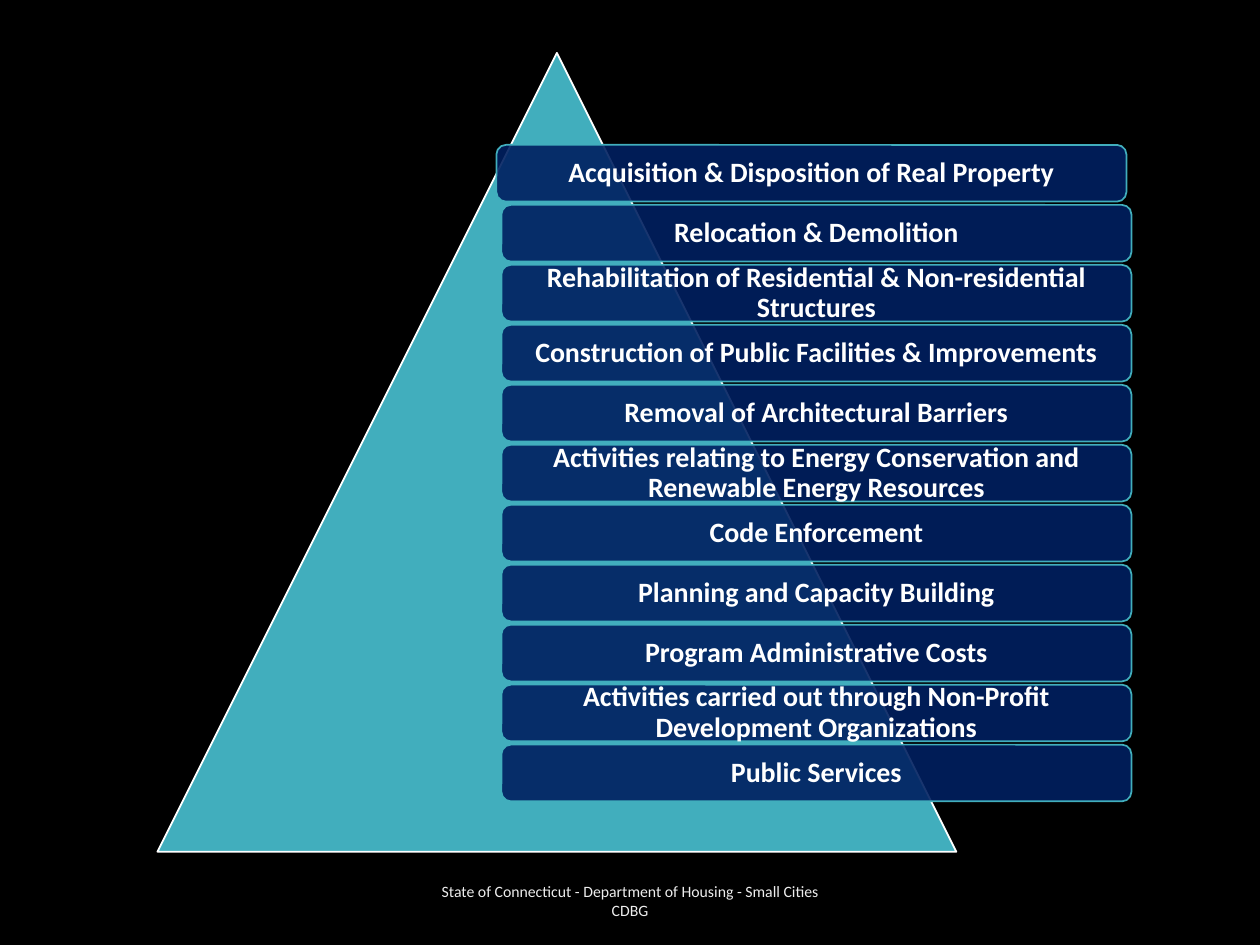
from pptx import Presentation
from pptx.dml.color import RGBColor
from pptx.enum.shapes import MSO_SHAPE
from pptx.enum.text import MSO_ANCHOR, PP_ALIGN
from pptx.oxml.ns import qn
from pptx.util import Inches, Pt
from lxml import etree

TRIANGLE = MSO_SHAPE.ISOSCELES_TRIANGLE
ROUNDED = MSO_SHAPE.ROUNDED_RECTANGLE
MIDDLE = MSO_ANCHOR.MIDDLE
CENTER = PP_ALIGN.CENTER

BLACK = RGBColor(0x00, 0x00, 0x00)
WHITE = RGBColor(0xFF, 0xFF, 0xFF)
PALE_GRAY = RGBColor(0xED, 0xED, 0xED)
TEAL = RGBColor(0x41, 0xAE, 0xBD)
NAVY = RGBColor(0x00, 0x20, 0x60)

# Content
ACTIVITIES = [
    "Acquisition & Disposition of Real Property",
    "Relocation & Demolition",
    "Rehabilitation of Residential & Non-residential Structures",
    "Construction of Public Facilities & Improvements",
    "Removal of Architectural Barriers",
    "Activities relating to Energy Conservation and Renewable Energy Resources",
    "Code Enforcement",
    "Planning and Capacity Building",
    "Program Administrative Costs",
    "Activities carried out through Non-Profit Development Organizations",
    "Public Services",
]
FOOTER = "State of Connecticut - Department of Housing - Small Cities CDBG"

ACTIVITY_FONT = {"name": "Calibri", "size": Pt(16), "bold": True}
FOOTER_FONT = {"name": "Calibri", "size": Pt(9)}

# Layout in inches
FIRST_BAR_LEFT, BAR_LEFT = 3.94, 3.98  # the first bar sits slightly left
BAR_TOP, BAR_PITCH = 1.15, 0.476
BAR_WIDTH, BAR_HEIGHT = 5, 0.45
BAR_INSET = 0.07
BAR_OPACITY = 90


def add_outlined(shapes, preset, box, fill, line):
    shape = shapes.add_shape(preset, *map(Inches, box))
    shape.shadow.inherit = False
    shape.fill.solid()
    shape.fill.fore_color.rgb = fill
    shape.line.color.rgb = line
    shape.line.width = Pt(1)
    return shape


def set_opacity(shape, percent):
    color = shape.fill._xPr.find(qn("a:solidFill"))[0]
    etree.SubElement(color, qn("a:alpha"), val=str(percent * 1000))


def write(shape, text, font_format, color):
    frame = shape.text_frame
    frame.word_wrap = True
    frame.vertical_anchor = MIDDLE
    paragraph = frame.paragraphs[0]
    paragraph.alignment = CENTER
    run = paragraph.add_run()
    run.text = text
    for name, value in font_format.items():
        setattr(run.font, name, value)
    run.font.color.rgb = color
    return frame


prs = Presentation()
prs.slide_width, prs.slide_height = Inches(10), Inches(7.5)
slide = prs.slides.add_slide(prs.slide_layouts[6])
slide.background.fill.solid()
slide.background.fill.fore_color.rgb = BLACK

# Footer
footer = slide.shapes.add_textbox(*map(Inches, (3.31, 6.95, 3.38, 0.4)))
write(footer, FOOTER, FOOTER_FONT, PALE_GRAY)

# Pyramid with its list of activities
pyramid = slide.shapes.add_group_shape().shapes
add_outlined(pyramid, TRIANGLE, (1.25, 0.42, 6.34, 6.34), TEAL, WHITE)
for index, activity in enumerate(ACTIVITIES):
    left = BAR_LEFT if index else FIRST_BAR_LEFT
    box = (left, BAR_TOP + index * BAR_PITCH, BAR_WIDTH, BAR_HEIGHT)
    bar = add_outlined(pyramid, ROUNDED, box, NAVY, TEAL)
    set_opacity(bar, BAR_OPACITY)
    frame = write(bar, activity, ACTIVITY_FONT, WHITE)
    frame.paragraphs[0].line_spacing = 0.9
    for side in ("left", "top", "right", "bottom"):
        setattr(frame, f"margin_{side}", Inches(BAR_INSET))

prs.save("out.pptx")
